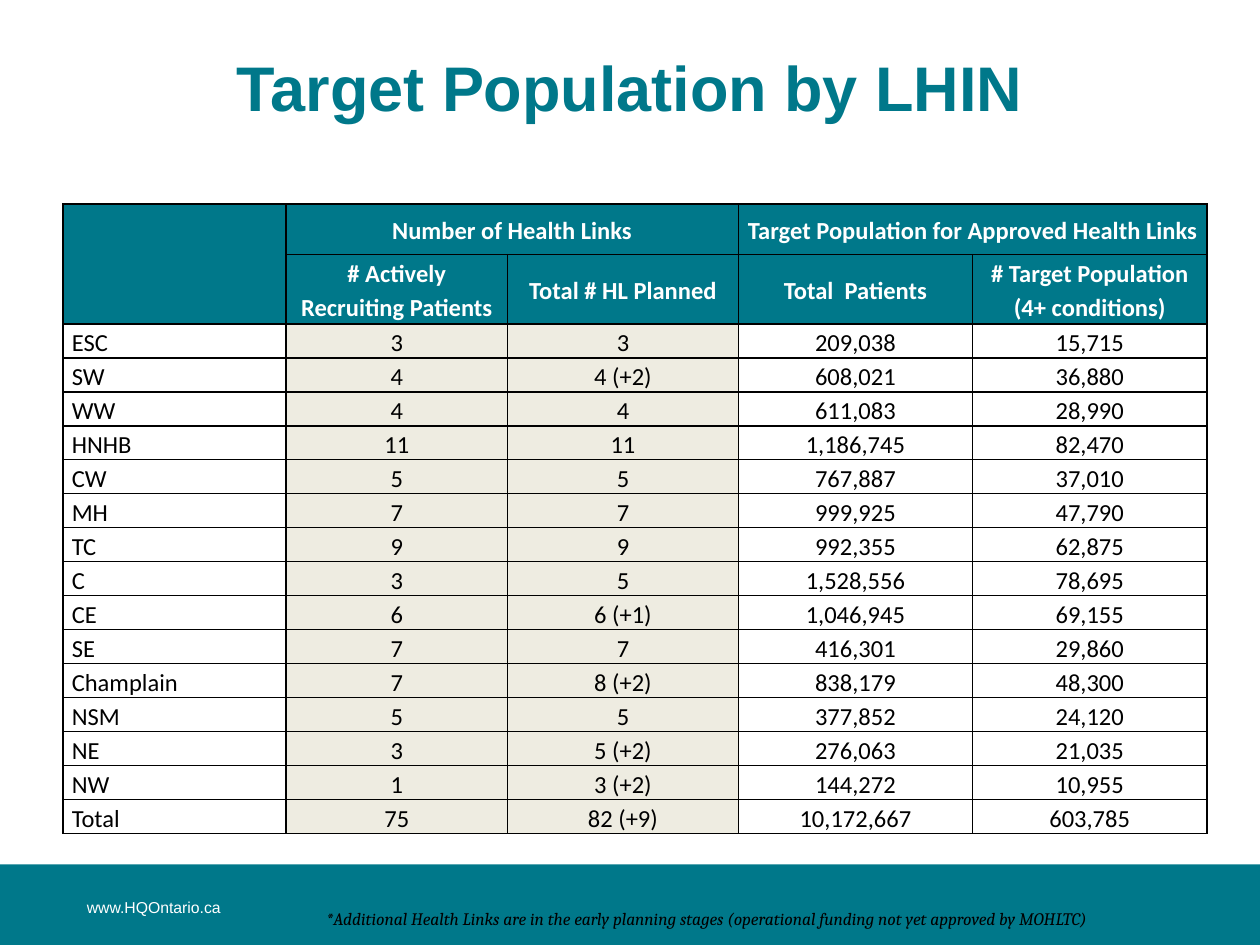
import pptx
import pptx.util
import pptx.dml.color
import pptx.enum.shapes
import pptx.enum.text
import pptx.oxml.ns
import lxml.etree

Inches = pptx.util.Inches
Pt = pptx.util.Pt
RGBColor = pptx.dml.color.RGBColor
ALIGN = pptx.enum.text.PP_ALIGN
ANCHOR = pptx.enum.text.MSO_ANCHOR

TEAL = RGBColor(0x00, 0x78, 0x8A)
BEIGE = RGBColor(0xEE, 0xEC, 0xE1)
WHITE = RGBColor(0xFF, 0xFF, 0xFF)
BLACK = RGBColor(0x00, 0x00, 0x00)

BAND = (0, 6.86, 10.04, 0.67)
TEXTS = [
    ("Target Population by LHIN", (0.5, 0.3, 9, 0.77), ALIGN.CENTER, ANCHOR.MIDDLE,
     {"name": "Arial", "size": Pt(36), "bold": True}, TEAL),
    ("www.HQOntario.ca", (0.59, 7.08, 3.08, 0.27), ALIGN.LEFT, ANCHOR.TOP,
     {"name": "Arial", "size": Pt(9)}, WHITE),
    ("*Additional Health Links are in the early planning stages "
     "(operational funding not yet approved by MOHLTC)",
     (2.13, 7.16, 6.59, 0.27), ALIGN.RIGHT, ANCHOR.TOP,
     {"name": "Cambria", "size": Pt(10), "italic": True}, BLACK),
]

HEADERS = [
    ("", "Number of Health Links", "", "Target Population for Approved Health Links", ""),
    ("", "# Actively Recruiting Patients", "Total # HL Planned", "Total  Patients",
     "# Target Population\n(4+ conditions)"),
]
REGIONS = [
    ("ESC", "3", "3", "209,038", "15,715"),
    ("SW", "4", "4 (+2)", "608,021", "36,880"),
    ("WW", "4", "4", "611,083", "28,990"),
    ("HNHB", "11", "11", "1,186,745", "82,470"),
    ("CW", "5", "5", "767,887", "37,010"),
    ("MH", "7", "7", "999,925", "47,790"),
    ("TC", "9", "9", "992,355", "62,875"),
    ("C", "3", "5", "1,528,556", "78,695"),
    ("CE", "6", "6 (+1)", "1,046,945", "69,155"),
    ("SE", "7", "7", "416,301", "29,860"),
    ("Champlain", "7", "8 (+2)", "838,179", "48,300"),
    ("NSM", "5", "5", "377,852", "24,120"),
    ("NE", "3", "5 (+2)", "276,063", "21,035"),
    ("NW", "1", "3 (+2)", "144,272", "10,955"),
    ("Total", "75", "82 (+9)", "10,172,667", "603,785"),
]
MERGES = [((0, 0), (1, 0)), ((0, 1), (0, 2)), ((0, 3), (0, 4))]
TABLE_AT = (0.5, 1.62, 9.09, 5.01)
COLUMN_WIDTHS = (1.77, 1.76, 1.83, 1.86, 1.86)
ROW_HEIGHTS = (0.4, 0.55) + (0.27,) * len(REGIONS)
CELL_FORMAT = {"margin_left": Inches(0.07), "margin_right": Inches(0.07),
               "margin_top": 0, "margin_bottom": 0}


def set_values(target, values):
    for name, value in values.items():
        setattr(target, name, value)


def format_text(text_frame, align, font_format, color, line_spacing=None):
    for paragraph in text_frame.paragraphs:
        paragraph.alignment = align
        paragraph.line_spacing = line_spacing
        for run in paragraph.runs:
            set_values(run.font, font_format)
            run.font.color.rgb = color


def add_borders(cell):
    properties = cell._tc.get_or_add_tcPr()
    qn = pptx.oxml.ns.qn
    for side in ("a:lnL", "a:lnR", "a:lnT", "a:lnB"):
        line = lxml.etree.SubElement(properties, qn(side), w=str(Pt(1)))
        fill = lxml.etree.SubElement(line, qn("a:solidFill"))
        lxml.etree.SubElement(fill, qn("a:srgbClr"), val=str(BLACK))


def add_band(slide):
    band = slide.shapes.add_shape(pptx.enum.shapes.MSO_SHAPE.RECTANGLE, *map(Inches, BAND))
    band.shadow.inherit = False
    band.fill.solid()
    band.fill.fore_color.rgb = TEAL
    band.line.fill.background()


def add_text(slide, text, box, align, anchor, font_format, color):
    text_frame = slide.shapes.add_textbox(*map(Inches, box)).text_frame
    set_values(text_frame, {"text": text, "word_wrap": True, "vertical_anchor": anchor})
    format_text(text_frame, align, font_format, color)


def format_cell(cell, text, row, column):
    header = row < len(HEADERS)
    beige = column in (1, 2)
    bottom = not header and (column < 3 or row == len(ROW_HEIGHTS) - 1)
    cell.text = text
    set_values(cell, CELL_FORMAT)
    cell.vertical_anchor = ANCHOR.BOTTOM if bottom else ANCHOR.MIDDLE
    align = ALIGN.CENTER if header or column else ALIGN.LEFT
    font_format = {"name": "Calibri", "size": Pt(14), "bold": header}
    format_text(cell.text_frame, align, font_format, WHITE if header else BLACK, 1.15)
    add_borders(cell)
    if header or beige:
        cell.fill.solid()
        cell.fill.fore_color.rgb = TEAL if header else BEIGE
    else:
        cell.fill.background()


def add_population_table(slide):
    rows = HEADERS + REGIONS
    table = slide.shapes.add_table(len(rows), len(COLUMN_WIDTHS), *map(Inches, TABLE_AT)).table
    set_values(table, {"first_row": False, "horz_banding": False})
    for column, width in zip(table.columns, COLUMN_WIDTHS):
        column.width = Inches(width)
    for row, height in zip(table.rows, ROW_HEIGHTS):
        row.height = Inches(height)
    for row, texts in enumerate(rows):
        for column, text in enumerate(texts):
            format_cell(table.cell(row, column), text, row, column)
    for first, last in MERGES:
        table.cell(*first).merge(table.cell(*last))


def main():
    presentation = pptx.Presentation()
    set_values(presentation, {"slide_width": Inches(10), "slide_height": Inches(7.5)})
    slide = presentation.slides.add_slide(presentation.slide_layouts[6])
    add_band(slide)
    for text in TEXTS:
        add_text(slide, *text)
    add_population_table(slide)
    presentation.save("out.pptx")


if __name__ == "__main__":
    main()
